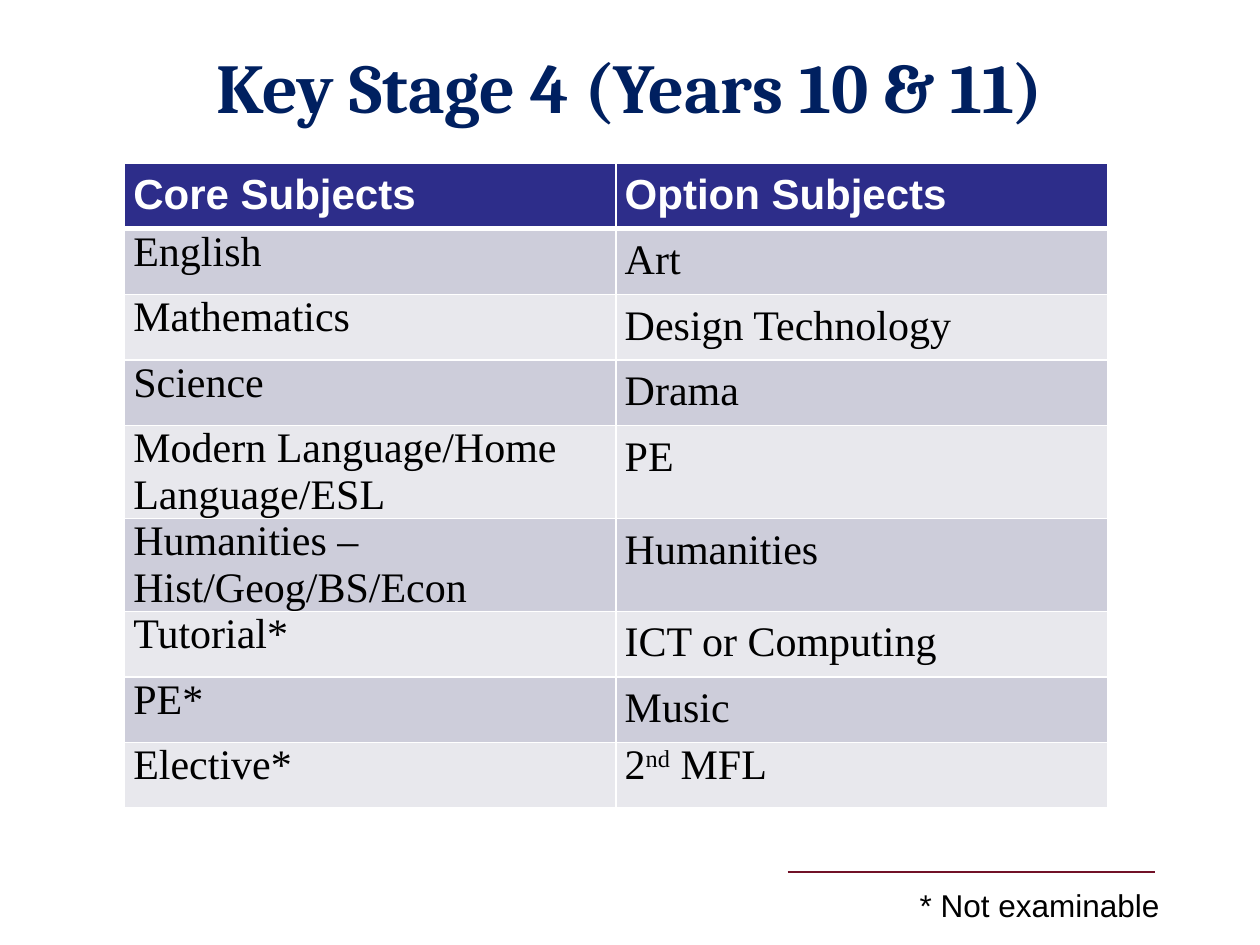
from lxml import etree
from pptx import Presentation
from pptx.dml.color import RGBColor
from pptx.enum.shapes import MSO_CONNECTOR
from pptx.enum.text import MSO_ANCHOR, PP_ALIGN
from pptx.oxml.ns import qn
from pptx.util import Pt

STRAIGHT = MSO_CONNECTOR.STRAIGHT
MIDDLE = MSO_ANCHOR.MIDDLE
TOP = MSO_ANCHOR.TOP
CENTER = PP_ALIGN.CENTER
TITLE_ONLY = 5

HEADER_FILL = "2D2D8A"
BAND_FILLS = ["E8E8ED", "CDCDDA"]
ROWS = [
    ("Core Subjects", "Option Subjects"),
    ("English", "Art"),
    ("Mathematics", "Design Technology"),
    ("Science", "Drama"),
    ("Modern Language/Home Language/ESL", "PE"),
    ("Humanities – Hist/Geog/BS/Econ", "Humanities"),
    ("Tutorial*", "ICT or Computing"),
    ("PE*", "Music"),
    ("Elective*", "2|nd| MFL"),  # the middle part is superscript
]


def add_run(paragraph, text, size, font, color, bold=False):
    run = paragraph.add_run()
    run.text = text
    run.font.size = Pt(size)
    run.font.name = font
    run.font.bold = bold
    run.font.color.rgb = RGBColor.from_string(color)
    return run


def add_border(cell, side, width):
    """Draw a white border on one side (L, R, T or B); call before filling."""
    line = etree.SubElement(cell._tc.get_or_add_tcPr(), qn(f"a:ln{side}"), w=str(Pt(width)))
    fill = etree.SubElement(line, qn("a:solidFill"))
    etree.SubElement(fill, qn("a:srgbClr"), val="FFFFFF")


presentation = Presentation()
presentation.slide_width = Pt(720)
presentation.slide_height = Pt(540)
slide = presentation.slides.add_slide(presentation.slide_layouts[TITLE_ONLY])

# Rule above the footnote
rule = slide.shapes.add_connector(STRAIGHT, Pt(450), Pt(498.2), Pt(660.2), Pt(498.2))
rule.line.color.rgb = RGBColor.from_string("711127")
rule.line.width = Pt(1.25)
etree.SubElement(rule._element.spPr, qn("a:effectLst"))

# Title
title = slide.shapes.title
title.left, title.top, title.width, title.height = Pt(36), Pt(3.6), Pt(648), Pt(90)
title.text_frame.vertical_anchor = MIDDLE
paragraph = title.text_frame.paragraphs[0]
paragraph.alignment = CENTER
add_run(paragraph, "Key Stage 4 (Years 10 & 11)", 40, "Cambria", "002060", bold=True)

# Subject table
table = slide.shapes.add_table(len(ROWS), 2, Pt(71.2), Pt(93.2), Pt(561.6), Pt(338)).table
for column in table.columns:
    column.width = Pt(280.8)
for row in table.rows:
    row.height = Pt(37.5)

last_row = len(ROWS) - 1
for row_index, subjects in enumerate(ROWS):
    is_header = row_index == 0
    for column_index, subject in enumerate(subjects):
        cell = table.cell(row_index, column_index)
        cell.margin_left = cell.margin_right = Pt(5)
        cell.margin_top = cell.margin_bottom = Pt(0)
        cell.vertical_anchor = TOP
        for side in "LRTB":
            on_header_edge = (is_header and side == "B") or (row_index == 1 and side == "T")
            add_border(cell, side, 3 if on_header_edge else 1)
        fill = HEADER_FILL if is_header else BAND_FILLS[row_index % 2]
        cell.fill.solid()
        cell.fill.fore_color.rgb = RGBColor.from_string(fill)

        paragraph = cell.text_frame.paragraphs[0]
        if is_header or (column_index == 1 and row_index < last_row):
            paragraph.line_spacing = 1.18
            paragraph.space_after = Pt(6)
        for part_index, part in enumerate(subject.split("|")):
            if is_header:
                add_run(paragraph, part, 24, "Arial", "FFFFFF", bold=True)
            else:
                run = add_run(paragraph, part, 24, "Times New Roman", "000000")
                if part_index == 1:
                    run.font._element.set("baseline", "30000")

# Footnote
footnote = slide.shapes.add_textbox(Pt(518.4), Pt(502.6), Pt(238.3), Pt(29))
footnote.text_frame.word_wrap = True
add_run(footnote.text_frame.paragraphs[0], "* Not examinable", 18, "Arial", "000000")

presentation.save("out.pptx")
